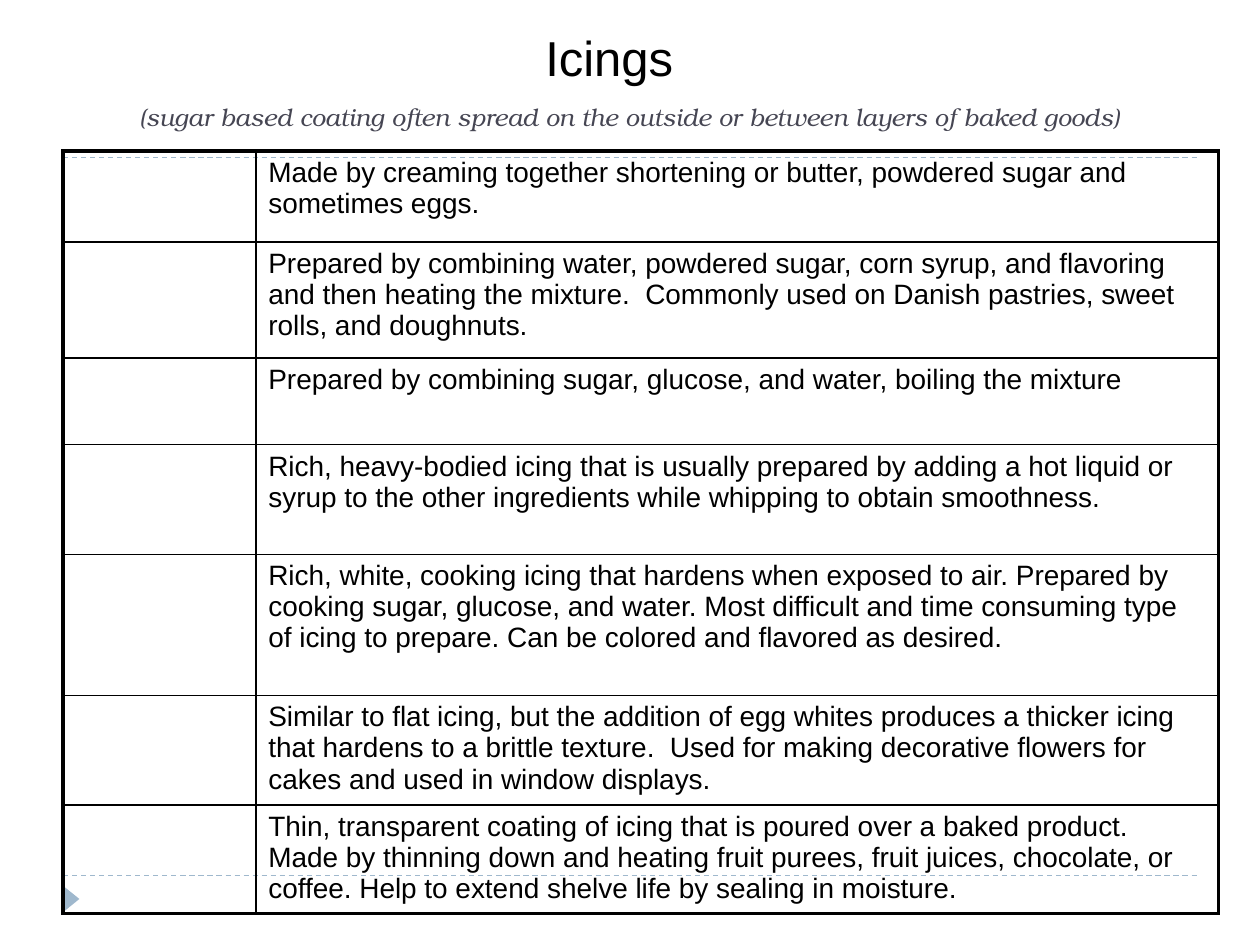
from lxml import etree
from pptx import Presentation
from pptx.dml.color import RGBColor
from pptx.enum.dml import MSO_LINE
from pptx.enum.shapes import MSO_CONNECTOR, MSO_SHAPE
from pptx.enum.text import MSO_ANCHOR, PP_ALIGN
from pptx.oxml.ns import qn
from pptx.util import Pt

BLACK = RGBColor(0x00, 0x00, 0x00)
SLATE = RGBColor(0x46, 0x46, 0x53)
MIST = RGBColor(0x9F, 0xB8, 0xCD)

STRAIGHT = MSO_CONNECTOR.STRAIGHT
TRIANGLE = MSO_SHAPE.ISOSCELES_TRIANGLE
DASH = MSO_LINE.DASH
LEFT, CENTER = PP_ALIGN.LEFT, PP_ALIGN.CENTER
TOP, BOTTOM = MSO_ANCHOR.TOP, MSO_ANCHOR.BOTTOM

OUTER, INNER = 2.25, 1  # table border widths
COLUMN_WIDTHS = (110.16, 550.08)

# Row height and description of each icing; the name column stays blank
ICINGS = [
    (51.84, "Made by creaming together shortening or butter, powdered sugar and "
            "sometimes eggs."),
    (66.24, "Prepared by combining water, powdered sugar, corn syrup, and flavoring "
            "and then heating the mixture.  Commonly used on Danish pastries, sweet "
            "rolls, and doughnuts."),
    (49.68, "Prepared by combining sugar, glucose, and water, boiling the mixture"),
    (62.64, "Rich, heavy-bodied icing that is usually prepared by adding a hot liquid "
            "or syrup to the other ingredients while whipping to obtain smoothness."),
    (80.64, "Rich, white, cooking icing that hardens when exposed to air. Prepared by "
            "cooking sugar, glucose, and water. Most difficult and time consuming type "
            "of icing to prepare. Can be colored and flavored as desired."),
    (62.64, "Similar to flat icing, but the addition of egg whites produces a thicker "
            "icing that hardens to a brittle texture.  Used for making decorative "
            "flowers for cakes and used in window displays."),
    (61.92, "Thin, transparent coating of icing that is poured over a baked product. "
            "Made by thinning down and heating fruit purees, fruit juices, chocolate, "
            "or coffee. Help to extend shelve life by sealing in moisture."),
]


def write(frame, text, size, font="Arial", color=BLACK, italic=False,
          align=LEFT, anchor=TOP):
    frame.word_wrap = True
    frame.vertical_anchor = anchor
    paragraph = frame.paragraphs[0]
    paragraph.alignment = align
    run = paragraph.add_run()
    run.text = text
    run.font.size = Pt(size)
    run.font.name = font
    run.font.color.rgb = color
    run.font.italic = italic


def add_rule(slide, y):
    rule = slide.shapes.add_connector(STRAIGHT, Pt(36), Pt(y), Pt(684), Pt(y))
    rule.line.color.rgb = MIST
    rule.line.width = Pt(0.75)
    rule.line.dash_style = DASH
    etree.SubElement(rule._element.spPr, qn("a:effectLst"))


def add_marker(slide):
    marker = slide.shapes.add_shape(TRIANGLE, Pt(33.12), Pt(509.04), Pt(15.12), Pt(9.36))
    marker.rotation = 90
    marker.shadow.inherit = False
    marker.fill.solid()
    marker.fill.fore_color.rgb = MIST
    marker.line.fill.background()


def set_borders(cell, **widths):
    properties = cell._tc.get_or_add_tcPr()
    for position, (side, width) in enumerate(widths.items()):
        border = etree.Element(qn(f"a:ln{side}"), w=str(Pt(width)))
        fill = etree.SubElement(border, qn("a:solidFill"))
        etree.SubElement(fill, qn("a:srgbClr"), val=str(BLACK))
        properties.insert(position, border)


def add_icing_table(slide):
    height = sum(row_height for row_height, _ in ICINGS)
    table = slide.shapes.add_table(len(ICINGS), 2, Pt(36), Pt(86.4),
                                   Pt(sum(COLUMN_WIDTHS)), Pt(height)).table
    table.first_row = table.horz_banding = False
    for column, width in zip(table.columns, COLUMN_WIDTHS):
        column.width = Pt(width)

    last = len(ICINGS) - 1
    for index, (row_height, description) in enumerate(ICINGS):
        row = table.rows[index]
        row.height = Pt(row_height)
        name_cell, description_cell = row.cells
        write(description_cell.text_frame, description, 16)
        for cell in (name_cell, description_cell):
            cell.fill.background()
            set_borders(cell,
                        L=OUTER if cell is name_cell else INNER,
                        R=OUTER if cell is description_cell else INNER,
                        T=OUTER if index == 0 else INNER,
                        B=OUTER if index == last else INNER)


def main():
    prs = Presentation()
    prs.slide_width, prs.slide_height = Pt(720), Pt(540)
    slide = prs.slides.add_slide(prs.slide_layouts[5])

    # Template decoration
    add_rule(slide, 500.4)
    add_rule(slide, 90)
    add_marker(slide)

    # Definition in the title placeholder
    definition = slide.shapes.title
    definition.left, definition.top = Pt(36), Pt(12.24)
    definition.width, definition.height = Pt(648), Pt(66.24)
    write(definition.text_frame,
          "(sugar based coating often spread on the outside or between layers of "
          "baked goods)", 14, font="TeX Gyre Bonum", color=SLATE, italic=True,
          align=CENTER, anchor=BOTTOM)

    add_icing_table(slide)

    # Heading above the definition
    heading = slide.shapes.add_textbox(Pt(174.24), Pt(12.24), Pt(347.76), Pt(41.04))
    write(heading.text_frame, "Icings", 28, align=CENTER)

    prs.save("out.pptx")


if __name__ == "__main__":
    main()
